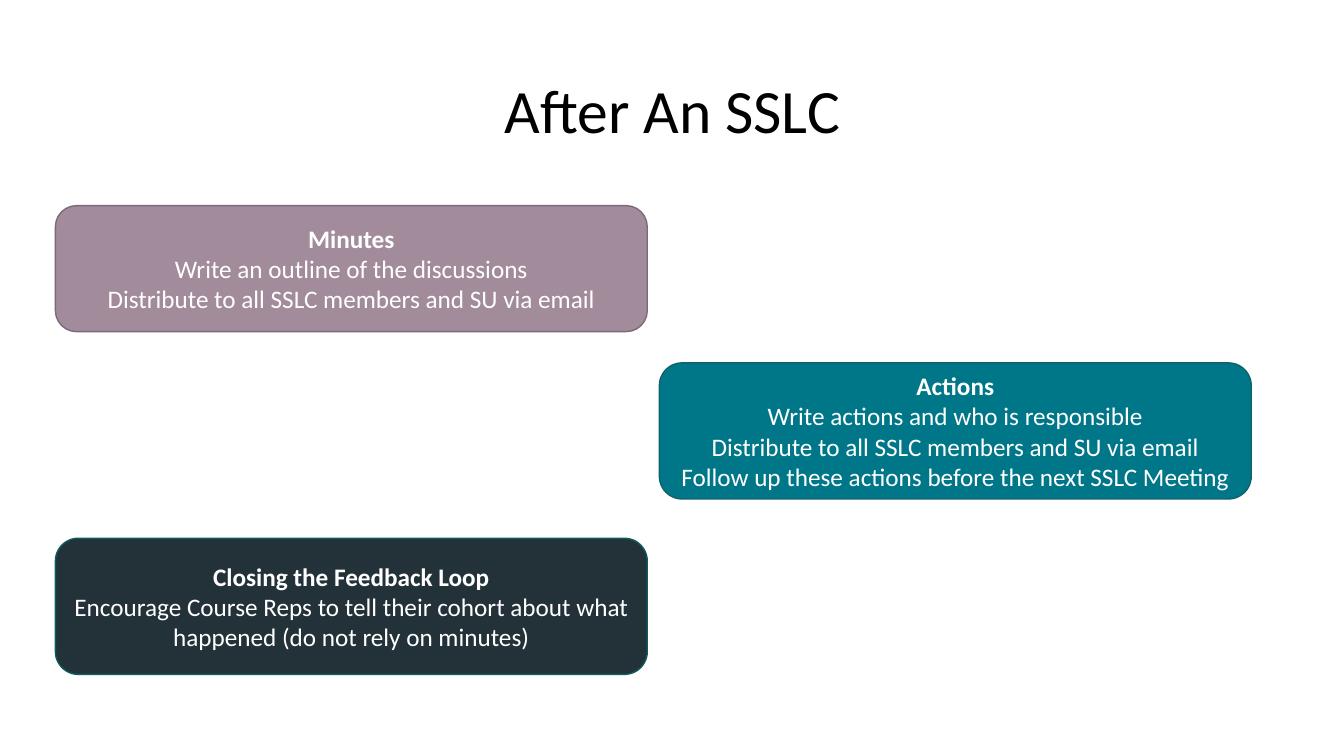
from dataclasses import dataclass

from pptx import Presentation
from pptx.dml.color import RGBColor
from pptx.enum.shapes import MSO_SHAPE
from pptx.enum.text import MSO_ANCHOR, PP_ALIGN
from pptx.slide import Slide
from pptx.text.text import TextFrame
from pptx.util import Inches, Pt

ROUND = MSO_SHAPE.ROUNDED_RECTANGLE
MIDDLE = MSO_ANCHOR.MIDDLE
CENTER = PP_ALIGN.CENTER

BLACK = RGBColor(0x00, 0x00, 0x00)
WHITE = RGBColor(0xFF, 0xFF, 0xFF)
MAUVE = RGBColor(0xA2, 0x8B, 0x9B)
PLUM = RGBColor(0x7B, 0x6B, 0x78)
TEAL = RGBColor(0x00, 0x77, 0x88)
DEEP = RGBColor(0x11, 0x61, 0x6C)
SLATE = RGBColor(0x23, 0x32, 0x39)
PINE = RGBColor(0x10, 0x5B, 0x5E)

FONT = "Calibri"
LEFT, RIGHT, WIDTH = 0.55, 6.54, 5.87


@dataclass(frozen=True)
class Card:
    left: float
    top: float
    height: float
    fill: RGBColor
    edge: RGBColor
    head: str
    lines: tuple[str, ...]


CARDS = (
    Card(LEFT, 2.04, 1.25, MAUVE, PLUM, "Minutes", (
        "Write an outline of the discussions",
        "Distribute to all SSLC members and SU via email",
    )),
    Card(RIGHT, 3.6, 1.35, TEAL, DEEP, "Actions", (
        "Write actions and who is responsible",
        "Distribute to all SSLC members and SU via email",
        "Follow up these actions before the next SSLC Meeting",
    )),
    Card(LEFT, 5.34, 1.35, SLATE, PINE, "Closing the Feedback Loop", (
        "Encourage Course Reps to tell their cohort about what "
        "happened (do not rely on minutes)",
    )),
)


def write(frame: TextFrame, lines: tuple[str, ...], size: int,
          color: RGBColor, bold_head: bool = False) -> None:
    """Fill a frame with centred lines, the first one bold if asked."""
    frame.word_wrap = True
    frame.vertical_anchor = MIDDLE
    for i, line in enumerate(lines):
        para = frame.add_paragraph() if i else frame.paragraphs[0]
        para.alignment = CENTER
        run = para.add_run()
        run.text = line
        run.font.name = FONT
        run.font.size = Pt(size)
        run.font.bold = bold_head and i == 0
        run.font.color.rgb = color


def draw_title(slide: Slide, text: str) -> None:
    box = slide.shapes.add_textbox(
        Inches(0.92), Inches(0.4), Inches(11.5), Inches(1.45))
    write(box.text_frame, (text,), 44, BLACK)
    box.text_frame.paragraphs[0].line_spacing = 0.9


def draw_card(slide: Slide, card: Card) -> None:
    shape = slide.shapes.add_shape(
        ROUND, Inches(card.left), Inches(card.top),
        Inches(WIDTH), Inches(card.height))
    shape.shadow.inherit = False
    shape.fill.solid()
    shape.fill.fore_color.rgb = card.fill
    shape.line.color.rgb = card.edge
    shape.line.width = Pt(1)
    write(shape.text_frame, (card.head, *card.lines), 18, WHITE, True)


def main() -> None:
    deck = Presentation()
    deck.slide_width = Inches(13.33)
    deck.slide_height = Inches(7.5)
    slide = deck.slides.add_slide(deck.slide_layouts[6])

    # Title
    draw_title(slide, "After An SSLC")

    # Follow-up steps
    for card in CARDS:
        draw_card(slide, card)

    deck.save("out.pptx")


if __name__ == "__main__":
    main()
